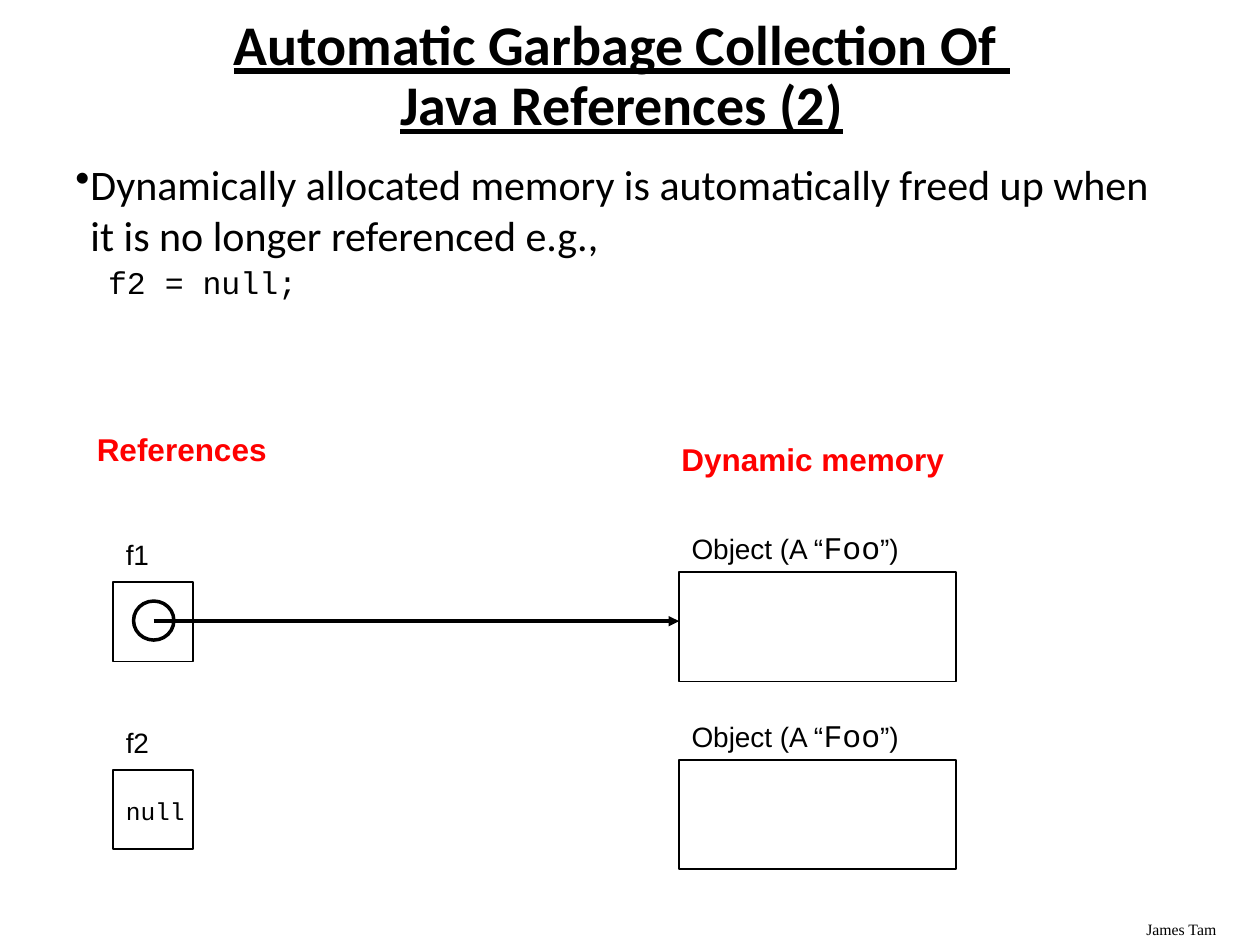
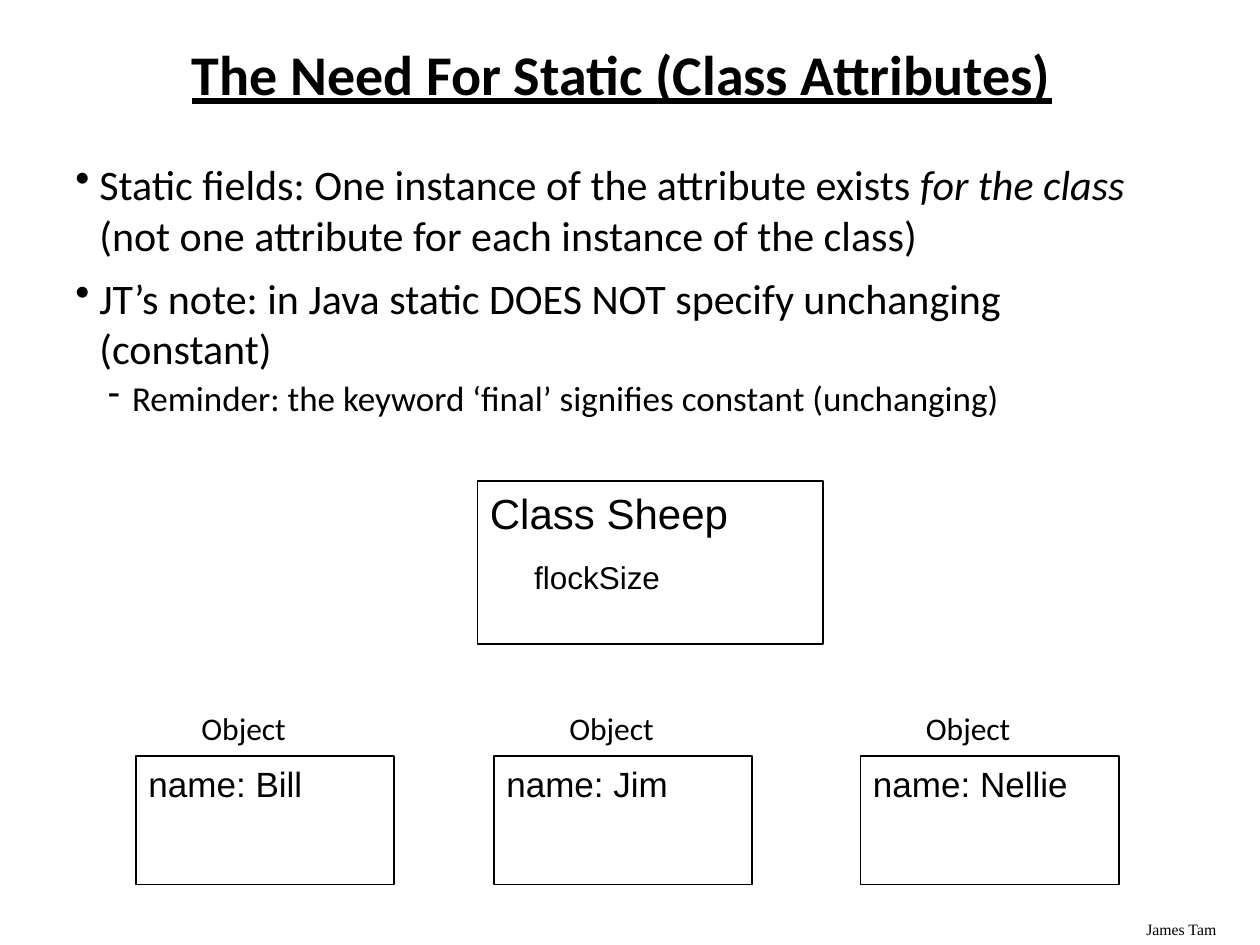
import pptx
import pptx.util
import pptx.dml.color
import pptx.enum.shapes
import pptx.enum.text
import pptx.oxml.ns
import lxml.etree

Inches, Pt = pptx.util.Inches, pptx.util.Pt
Shape = pptx.enum.shapes.MSO_SHAPE
Align, Anchor = pptx.enum.text.PP_ALIGN, pptx.enum.text.MSO_ANCHOR
BLACK, RED = "000000", "FF0000"


def style(name, size, **more):
    return {"name": name, "size": Pt(size), "color": BLACK, **more}


TITLE = style("Calibri", 32, bold=True, underline=True)
BODY = style("Calibri", 24)
SUB = style("Calibri", 20)
CODE = style("Courier New", 18)
FOOT = style("Times New Roman", 9)
HEAD = style("Arial", 18, bold=True, color=RED)
LABEL = style("Arial", 16)
NULL = style("Courier New", 14)
CLASS = style("Arial", 24)
FIELD = style("Arial", 18)
NAME = style("Arial", 20)
KIND = style("Calibri", 18)

FREED = {
    "title": "Automatic Garbage Collection Of \vJava References (2)",
    "body": [
        ([("Dynamically allocated memory is automatically freed up when "
           "it is no longer referenced e.g.,", BODY)], "•", 0.12, 0.12, 0),
        ([("f2 = null;", CODE)], None, 0.26, 0, 1.8),
    ],
}
STATIC = {
    "title": "The Need For Static (Class Attributes)",
    "body": [
        ([("Static fields: One instance of the attribute exists ", BODY),
          ("for the class", {**BODY, "italic": True}),
          (" (not one attribute for each instance of the class)", BODY)],
         "•", 0.19, 0.19, 0),
        ([("JT’s note: in Java static DOES NOT specify unchanging (constant)", BODY)],
         "•", 0.19, 0.19, 7.2),
        ([("Reminder: the keyword ‘final’ signifies constant (unchanging)", SUB)],
         "-", 0.45, 0.19, 2),
    ],
}
HEADS = [("References", 0.67, 3.36, 1.57), ("Dynamic memory", 5.31, 3.44, 2.6)]
REFS = ["f1", "f2"]
FOO = [("Object (A “", LABEL), ("Foo", CODE), ("”)", LABEL)]
SHEEP = [("Bill", 1.08, 1.5), ("Jim", 3.92, 4.42), ("Nellie", 6.83, 7.25)]


def paint(code):
    return pptx.dml.color.RGBColor.from_string(code)


def write(para, runs):
    for text, form in runs:
        for i, part in enumerate(text.split("\v")):
            if i:
                para.add_line_break()
            run = para.add_run()
            run.text = part
            for key, val in form.items():
                if key == "color":
                    run.font.color.rgb = paint(val)
                else:
                    setattr(run.font, key, val)


def inset(frame):
    form = {"word_wrap": True, "margin_left": Inches(0.1), "margin_right": Inches(0.1),
            "margin_top": Inches(0.05), "margin_bottom": Inches(0.05)}
    for key, val in form.items():
        setattr(frame, key, val)
    return frame


def label(slide, at, runs):
    frame = inset(slide.shapes.add_textbox(*map(Inches, at)).text_frame)
    write(frame.paragraphs[0], runs)
    return frame


def outline(slide, kind, at, width=1):
    shape = slide.shapes.add_shape(kind, *map(Inches, at))
    shape.shadow.inherit = False
    shape.fill.background()
    shape.line.color.rgb = paint(BLACK)
    shape.line.width = Pt(width)
    return shape


def arrow(slide, ends):
    line = slide.shapes.add_connector(
        pptx.enum.shapes.MSO_CONNECTOR.STRAIGHT, *map(Inches, ends))
    line.line.color.rgb = paint(BLACK)
    line.line.width = Pt(2)
    qn = pptx.oxml.ns.qn
    lxml.etree.SubElement(line.line._get_or_add_ln(), qn("a:tailEnd"), type="triangle")
    lxml.etree.SubElement(line._element.spPr, qn("a:effectLst"))


def bullet(para, mark, left, hang):
    props = para._p.get_or_add_pPr()
    props.set("marL", str(Inches(left)))
    props.set("indent", str(-Inches(hang)))
    qn = pptx.oxml.ns.qn
    if mark:
        lxml.etree.SubElement(props, qn("a:buChar"), char=mark)
    else:
        lxml.etree.SubElement(props, qn("a:buNone"))


def start(deck, page):
    slide = deck.slides.add_slide(deck.slide_layouts[6])
    label(slide, (9, 7.25, 1, 0.25), [("James Tam", FOOT)])
    frame = label(slide, (0.47, 0.33, 8.93, 0.57), [(page["title"], TITLE)])
    frame.vertical_anchor = Anchor.MIDDLE
    para = frame.paragraphs[0]
    para.alignment = Align.CENTER
    para.line_spacing = 0.9
    frame = label(slide, (0.5, 1.21, 8.94, 5.87), [])
    for i, (runs, mark, left, hang, gap) in enumerate(page["body"]):
        para = frame.add_paragraph() if i else frame.paragraphs[0]
        para.space_before = Pt(gap)
        bullet(para, mark, left, hang)
        write(para, runs)
    return slide


def freed(deck):
    slide = start(deck, FREED)
    for text, left, top, wide in HEADS:
        label(slide, (left, top, wide, 0.41), [(text, HEAD)])
    for i, ref in enumerate(REFS):
        down = 1.49 * i
        outline(slide, Shape.RECTANGLE, (0.9, 4.62 + down, 0.63, 0.63))
        label(slide, (0.9, 4.22 + down, 0.63, 0.37), [(ref, LABEL)])
        outline(slide, Shape.RECTANGLE, (5.39, 4.54 + down, 2.2, 0.87))
        label(slide, (5.39, 4.14 + down, 2.05, 0.4), FOO)
    arrow(slide, (1.22, 4.93, 5.39, 4.93))
    outline(slide, Shape.OVAL, (1.06, 4.77, 0.32, 0.31), 2)
    label(slide, (0.9, 6.27, 0.71, 0.33), [("null", NULL)])


def static(deck):
    slide = start(deck, STATIC)
    box = outline(slide, Shape.RECTANGLE, (3.79, 3.82, 2.74, 1.29))
    frame = inset(box.text_frame)
    frame.vertical_anchor = Anchor.TOP
    frame.paragraphs[0].alignment = Align.LEFT
    write(frame.paragraphs[0], [("Class Sheep", CLASS)])
    label(slide, (4.14, 4.38, 1.59, 0.4), [("flockSize", FIELD)])
    for name, left, over in SHEEP:
        outline(slide, Shape.RECTANGLE, (left, 6, 2.05, 1.02))
        label(slide, (left, 6, 2.05, 0.4), [("name: " + name, NAME)])
        label(slide, (over, 5.58, 1.25, 0.4), [("Object", KIND)])


def main():
    deck = pptx.Presentation()
    deck.slide_width, deck.slide_height = Inches(10), Inches(7.5)
    freed(deck)
    static(deck)
    deck.save("out.pptx")


if __name__ == "__main__":
    main()
